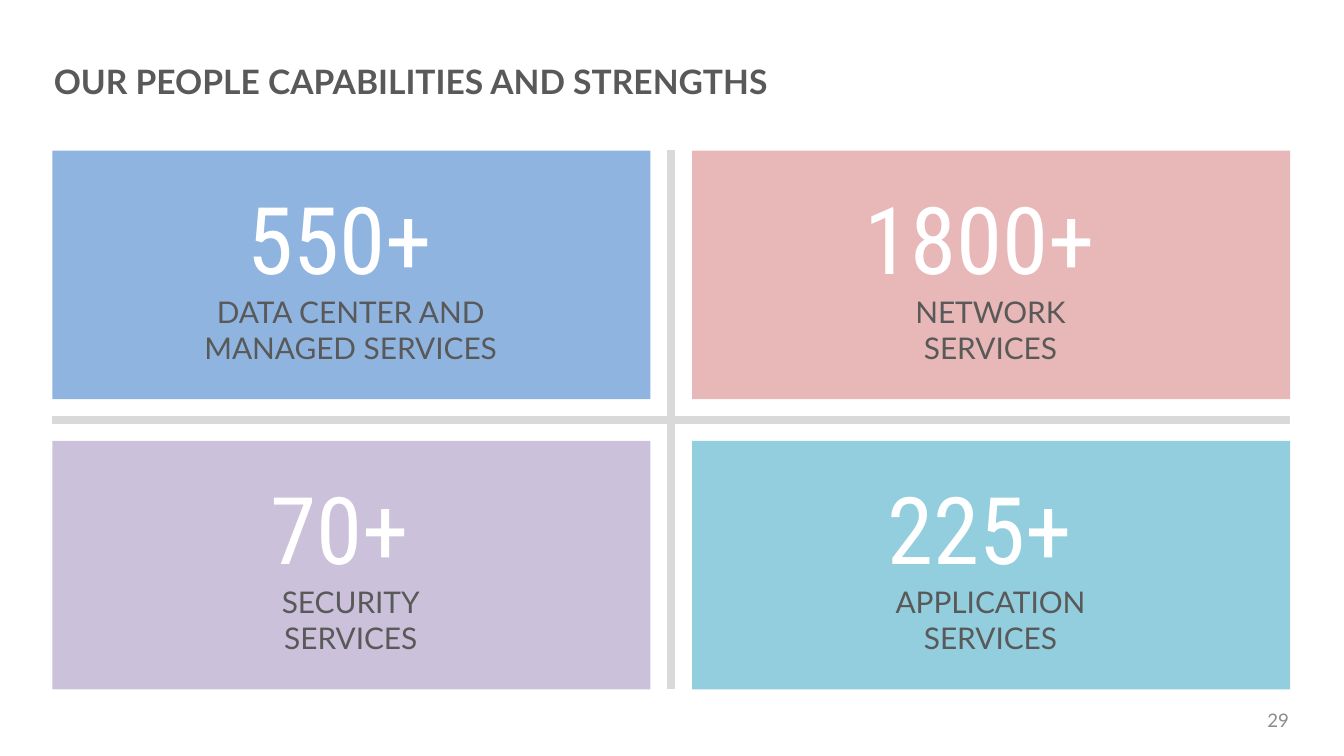
from copy import deepcopy
from dataclasses import dataclass

from pptx import Presentation
from pptx.dml.color import RGBColor
from pptx.enum.shapes import MSO_CONNECTOR, MSO_SHAPE
from pptx.enum.text import MSO_ANCHOR, MSO_AUTO_SIZE, PP_ALIGN
from pptx.oxml.ns import qn
from pptx.oxml.xmlchemy import OxmlElement
from pptx.util import Inches, Pt

RECTANGLE = MSO_SHAPE.RECTANGLE
STRAIGHT = MSO_CONNECTOR.STRAIGHT
MIDDLE = MSO_ANCHOR.MIDDLE
LEFT, CENTER, RIGHT = PP_ALIGN.LEFT, PP_ALIGN.CENTER, PP_ALIGN.RIGHT
FIT_SHAPE, NO_FIT = MSO_AUTO_SIZE.SHAPE_TO_FIT_TEXT, MSO_AUTO_SIZE.NONE


@dataclass(frozen=True)
class TextStyle:
    font: str
    size: float
    color: str
    bold: bool = False


@dataclass(frozen=True)
class Theme:
    title: TextStyle = TextStyle("Lato", 18, "595959", True)
    figure: TextStyle = TextStyle("Roboto Condensed", 50, "FFFFFF")
    label: TextStyle = TextStyle("Lato", 16, "595959")
    page_number: TextStyle = TextStyle("Lato", 10, "8C8C8C")
    divider: str = "D9D9D9"
    divider_width: float = 4.25
    blue: str = "8FB4E0"
    lilac: str = "CBC1DB"
    pink: str = "E7B8B7"
    teal: str = "92CEDE"


@dataclass(frozen=True)
class Capability:
    figure: str
    label: str
    fill: str
    column: int
    row: int


THEME = Theme()
CAPABILITIES = [
    Capability("550+ ", "DATA CENTER AND MANAGED SERVICES", THEME.blue, 0, 0),
    Capability("70+ ", "SECURITY\vSERVICES", THEME.lilac, 0, 1),
    Capability("1800+ ", "NETWORK\vSERVICES", THEME.pink, 1, 0),
    Capability("225+ ", "APPLICATION\vSERVICES", THEME.teal, 1, 1),
]

# Grid, in inches
GRID_LEFT, GRID_TOP = 0.39, 1.12
CARD_WIDTH, CARD_HEIGHT = 4.45, 1.85
COLUMN_STEP, ROW_STEP = 4.76, 2.16
GRID_RIGHT = GRID_LEFT + COLUMN_STEP + CARD_WIDTH
GRID_BOTTOM = GRID_TOP + ROW_STEP + CARD_HEIGHT
TEXT_WIDTH, TEXT_HEIGHT = 2.62, 1.48
TEXT_OFFSET_X, TEXT_OFFSET_Y = 0.91, 0.18


def write(para, text: str, style: TextStyle, align) -> None:
    para.text = text
    para.alignment = align
    for span in para.runs:
        span.font.name = style.font
        span.font.size = Pt(style.size)
        span.font.bold = style.bold
        span.font.color.rgb = RGBColor.from_string(style.color)
    # Line breaks take the size of the text around them
    for line_break in para._p.findall(qn("a:br")):
        line_break.insert(0, deepcopy(para.runs[0]._r.rPr))


def add_divider(page, x1: float, y1: float, x2: float, y2: float) -> None:
    line = page.shapes.add_connector(
        STRAIGHT, Inches(x1), Inches(y1), Inches(x2), Inches(y2))
    line.line.color.rgb = RGBColor.from_string(THEME.divider)
    line.line.width = Pt(THEME.divider_width)
    line._element.spPr.append(OxmlElement("a:effectLst"))


def card_origin(item: Capability) -> tuple[float, float]:
    return GRID_LEFT + item.column * COLUMN_STEP, GRID_TOP + item.row * ROW_STEP


def add_card(page, item: Capability) -> None:
    left, top = card_origin(item)
    card = page.shapes.add_shape(
        RECTANGLE, Inches(left), Inches(top), Inches(CARD_WIDTH), Inches(CARD_HEIGHT))
    card.shadow.inherit = False
    card.fill.solid()
    card.fill.fore_color.rgb = RGBColor.from_string(item.fill)
    card.line.fill.background()


def add_card_text(page, item: Capability) -> None:
    left, top = card_origin(item)
    box = page.shapes.add_textbox(
        Inches(left + TEXT_OFFSET_X), Inches(top + TEXT_OFFSET_Y),
        Inches(TEXT_WIDTH), Inches(TEXT_HEIGHT))
    frame = box.text_frame
    frame.word_wrap = True
    frame.auto_size = FIT_SHAPE
    write(frame.paragraphs[0], item.figure, THEME.figure, CENTER)
    write(frame.add_paragraph(), item.label, THEME.label, CENTER)


def add_title(page, text: str) -> None:
    title = page.shapes.title
    title.left, title.top = Inches(0.4), Inches(0.4)
    title.width, title.height = Inches(8.24), Inches(0.4)
    frame = title.text_frame
    frame.margin_left = 0
    frame.vertical_anchor = MIDDLE
    frame.auto_size = NO_FIT
    write(frame.paragraphs[0], text, THEME.title, LEFT)


def add_page_number(page, number: str) -> None:
    box = page.shapes.add_textbox(Inches(9.06), Inches(5.21), Inches(0.53), Inches(0.3))
    frame = box.text_frame
    frame.word_wrap = True
    frame.margin_right = 0
    frame.vertical_anchor = MIDDLE
    write(frame.paragraphs[0], number, THEME.page_number, RIGHT)


def main() -> None:
    # Widescreen page, 16:9
    deck = Presentation()
    deck.slide_width = Inches(10)
    deck.slide_height = deck.slide_width * 9 // 16
    page = deck.slides.add_slide(deck.slide_layouts.get_by_name("Title Only"))

    # Cross between the cards
    middle_x = (GRID_LEFT + GRID_RIGHT) / 2
    middle_y = (GRID_TOP + GRID_BOTTOM) / 2
    add_divider(page, middle_x, GRID_TOP, middle_x, GRID_BOTTOM)
    add_divider(page, GRID_LEFT, middle_y, GRID_RIGHT, middle_y)

    # Cards, then their text
    for item in CAPABILITIES:
        add_card(page, item)
    for item in CAPABILITIES:
        add_card_text(page, item)

    # Title and page number
    add_title(page, "OUR PEOPLE CAPABILITIES AND STRENGTHS")
    add_page_number(page, "29")
    deck.save("out.pptx")


if __name__ == "__main__":
    main()
